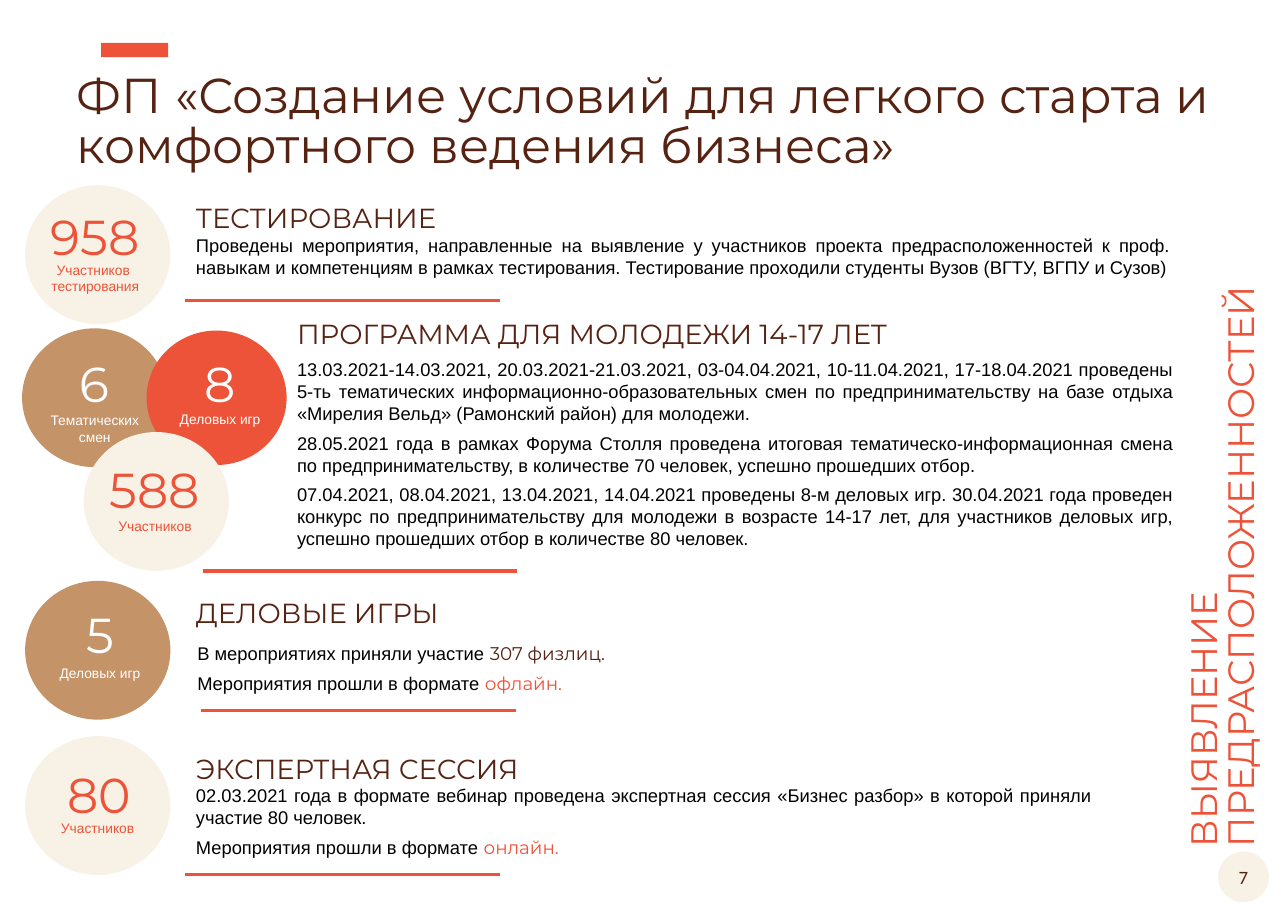
from lxml import etree
from pptx import Presentation
from pptx import util as u
from pptx.dml.color import RGBColor
from pptx.enum import shapes, text
from pptx.oxml import ns

Cm, Pt = u.Cm, u.Pt
RED = RGBColor(0xED, 0x53, 0x38)
BROWN = RGBColor(0x56, 0x22, 0x12)
CREAM = RGBColor(0xF7, 0xF2, 0xE5)
TAN = RGBColor(0xC5, 0x93, 0x68)
WHITE = RGBColor(0xFF, 0xFF, 0xFF)
BLACK = RGBColor(0, 0, 0)
HEAD, BODY = "Montserrat", "Arial"
LEFT, CENTER, JUSTIFY = text.PP_ALIGN.LEFT, text.PP_ALIGN.CENTER, text.PP_ALIGN.JUSTIFY
OVAL, RECT = shapes.MSO_SHAPE.OVAL, shapes.MSO_SHAPE.RECTANGLE

CIRCLES = [
    (0.58, 4.27, 3.35, 3.2, CREAM, RED, "958", "Участников \nтестирования", -0.06, 0.36, 1.63),
    (0.51, 7.57, 3.35, 3.2, TAN, WHITE, "6", "Тематических\nсмен", 0, 0.46, 1.8),
    (3.38, 7.62, 3.23, 3.1, RED, WHITE, "8", "Деловых игр", 0.08, 0.41, 1.73),
    (0.58, 13.39, 3.35, 3.2, TAN, WHITE, "5", "Деловых игр", 0.05, 0.41, 1.8),
    (1.93, 9.96, 3.35, 3.2, CREAM, RED, "588", "Участников", -0.03, 0.51, 1.85),
    (0.58, 16.97, 3.35, 3.2, CREAM, RED, "80", "Участников ", 0.04, 0.53, 1.8),
]

SECTIONS = [
    (4.27, 4.62, 22.99, "ТЕСТИРОВАНИЕ", 0, 0.66, 0, 2.31, JUSTIFY, [
        [("Проведены мероприятия, направленные на выявление у участников проекта "
          "предрасположенностей к проф. навыкам и компетенциям в рамках тестирования. "
          "Тестирование проходили студенты Вузов (ВГТУ, ВГПУ и Сузов)", BLACK)]]),
    (6.6, 7.29, 20.73, "ПРОГРАММА ДЛЯ МОЛОДЕЖИ 14-17 ЛЕТ", 0, 0.84, -1.93, 5.87, JUSTIFY, [
        [("13.03.2021-14.03.2021, 20.03.2021-21.03.2021, 03-04.04.2021, 10-11.04.2021, "
          "17-18.04.2021 проведены 5-ть тематических информационно-образовательных смен "
          "по предпринимательству на базе отдыха «Мирелия Вельд» (Рамонский район) "
          "для молодежи.", BLACK)],
        [("28.05.2021 года в рамках Форума Столля проведена итоговая "
          "тематическо-информационная смена по предпринимательству, в количестве "
          "70 человек, успешно прошедших отбор.", BLACK)],
        [("07.04.2021, 08.04.2021, 13.04.2021, 14.04.2021 проведены 8-м деловых игр. "
          "30.04.2021 года проведен конкурс по предпринимательству для молодежи в возрасте "
          "14-17 лет, для участников деловых игр, успешно прошедших отбор в количестве "
          "80 человек.", BLACK)]]),
    (4.27, 13.74, 18.26, "ДЕЛОВЫЕ ИГРЫ", 0.03, 0.94, 0.36, 2.64, LEFT, [
        [("В мероприятиях приняли участие ", BLACK), ("307 физлиц.", BROWN)],
        [("Мероприятия прошли в формате ", BLACK), ("офлайн.", RED)]]),
    (4.27, 17.32, 21.18, "ЭКСПЕРТНАЯ СЕССИЯ", 0, 0.64, 0, 2.84, JUSTIFY, [
        [("02.03.2021 года в формате вебинар проведена экспертная сессия «Бизнес разбор» "
          "в которой приняли участие 80 человек.", BLACK)],
        [("Мероприятия прошли в формате ", BLACK), ("онлайн.", RED)]]),
]


def style(font, name, size, color):
    """Set the face, size and colour of a font."""
    font.name, font.size, font.color.rgb = name, Pt(size), color


def add_text(s, x, y, w, h, words, name, size, color, align=LEFT, spacing=None):
    """Add a wrapped text box with one style throughout."""
    sp = s.shapes.add_textbox(Cm(x), Cm(y), Cm(w), Cm(h))
    tf = sp.text_frame
    tf.word_wrap = True
    tf.text = words
    for p in tf.paragraphs:
        p.alignment, p.line_spacing = align, spacing
        style(p.font, name, size, color)
    return sp


def add_plain(s, kind, x, y, w, h, fill):
    """Add a filled shape without outline or shadow."""
    sp = s.shapes.add_shape(kind, Cm(x), Cm(y), Cm(w), Cm(h))
    sp.shadow.inherit = False
    sp.fill.solid()
    sp.fill.fore_color.rgb = fill
    sp.line.fill.background()
    return sp


def add_title(s, x, y, w, h, words):
    """Place the title placeholder with the red bar above it."""
    add_plain(s, RECT, x + 0.81, y - 0.58, 1.55, 0.33, RED)
    sp = s.shapes.title
    sp.left, sp.top, sp.width, sp.height = Cm(x), Cm(y), Cm(w), Cm(h)
    tf = sp.text_frame
    tf.text = words
    tf.auto_size = text.MSO_AUTO_SIZE.NONE
    tf.vertical_anchor = text.MSO_ANCHOR.TOP
    p = tf.paragraphs[0]
    p.alignment, p.line_spacing = LEFT, 0.85
    style(p.font, HEAD, 32, BROWN)


def add_circle(s, x, y, w, h, fill, color, number, label, shift, number_drop, label_drop):
    """Add a circle holding a large number above a small label."""
    add_plain(s, OVAL, x, y, w, h, fill)
    left = x + (w - 3.02) / 2 + shift
    add_text(s, left, y + label_drop, 3.02, 0.64, label, BODY, 9, color, CENTER)
    add_text(s, left, y + number_drop, 3.02, 1.63, number, HEAD, 32, color, CENTER)


def add_rule(s, x, y, w):
    """Add a horizontal red rule."""
    cx = s.shapes.add_connector(shapes.MSO_CONNECTOR.STRAIGHT, Cm(x), Cm(y), Cm(x + w), Cm(y))
    cx.line.color.rgb = RED
    cx.line.width = Pt(2.25)
    etree.SubElement(cx._element.spPr, ns.qn("a:effectLst"))


def add_section(s, x, y, w, heading, shift, drop, rule_shift, rule_drop, align, paragraphs):
    """Add a heading, its body paragraphs and the closing rule."""
    add_text(s, x, y, w, 0.91, heading, HEAD, 18, BROWN, spacing=0.85)
    sp = s.shapes.add_textbox(Cm(x + shift), Cm(y + drop), Cm(w), Cm(rule_drop - drop))
    tf = sp.text_frame
    tf.word_wrap = True
    for i, parts in enumerate(paragraphs):
        p = tf.add_paragraph() if i else tf.paragraphs[0]
        p.alignment = align
        if i:
            p.space_before = Pt(5)
        for words, color in parts:
            r = p.add_run()
            r.text = words
            font = p.font if len(parts) == 1 else r.font
            style(font, BODY if color == BLACK else HEAD, 12, color)
    add_rule(s, x + rule_shift, y + rule_drop, 7.26)


def add_side_label(s, x, y, w, h, words):
    """Add a label read upwards, filling the upright box given."""
    sp = add_text(s, x + (w - h) / 2, y + (h - w) / 2, h, w, words, HEAD, 24, RED, spacing=0.85)
    sp.rotation = 270


def add_page_badge(s, x, y, size, number):
    """Add the round page number."""
    sp = add_plain(s, OVAL, x, y, size, size, CREAM)
    tf = sp.text_frame
    tf.margin_left = tf.margin_right = tf.margin_top = tf.margin_bottom = 0
    tf.vertical_anchor = text.MSO_ANCHOR.MIDDLE
    tf.text = number
    p = tf.paragraphs[0]
    p.alignment = CENTER
    style(p.font, "Calibri", 12.3, BROWN)


def main():
    """Build the slide and save it."""
    prs = Presentation()
    prs.slide_width, prs.slide_height = Cm(29.7), Cm(21)
    s = prs.slides.add_slide(prs.slide_layouts[5])
    add_page_badge(s, 28.09, 19.63, 1.17, "7")
    add_title(s, 1.52, 1.57, 27.33, 2.59,
              "ФП «Создание условий для легкого старта и комфортного ведения бизнеса»")
    for section in SECTIONS:
        add_section(s, *section)
    for circle in CIRCLES:
        add_circle(s, *circle)
    add_side_label(s, 27.25, 3.35, 2.01, 16.43, "ВЫЯВЛЕНИЕ ПРЕДРАСПОЛОЖЕННОСТЕЙ")
    prs.save("out.pptx")


if __name__ == "__main__":
    main()
